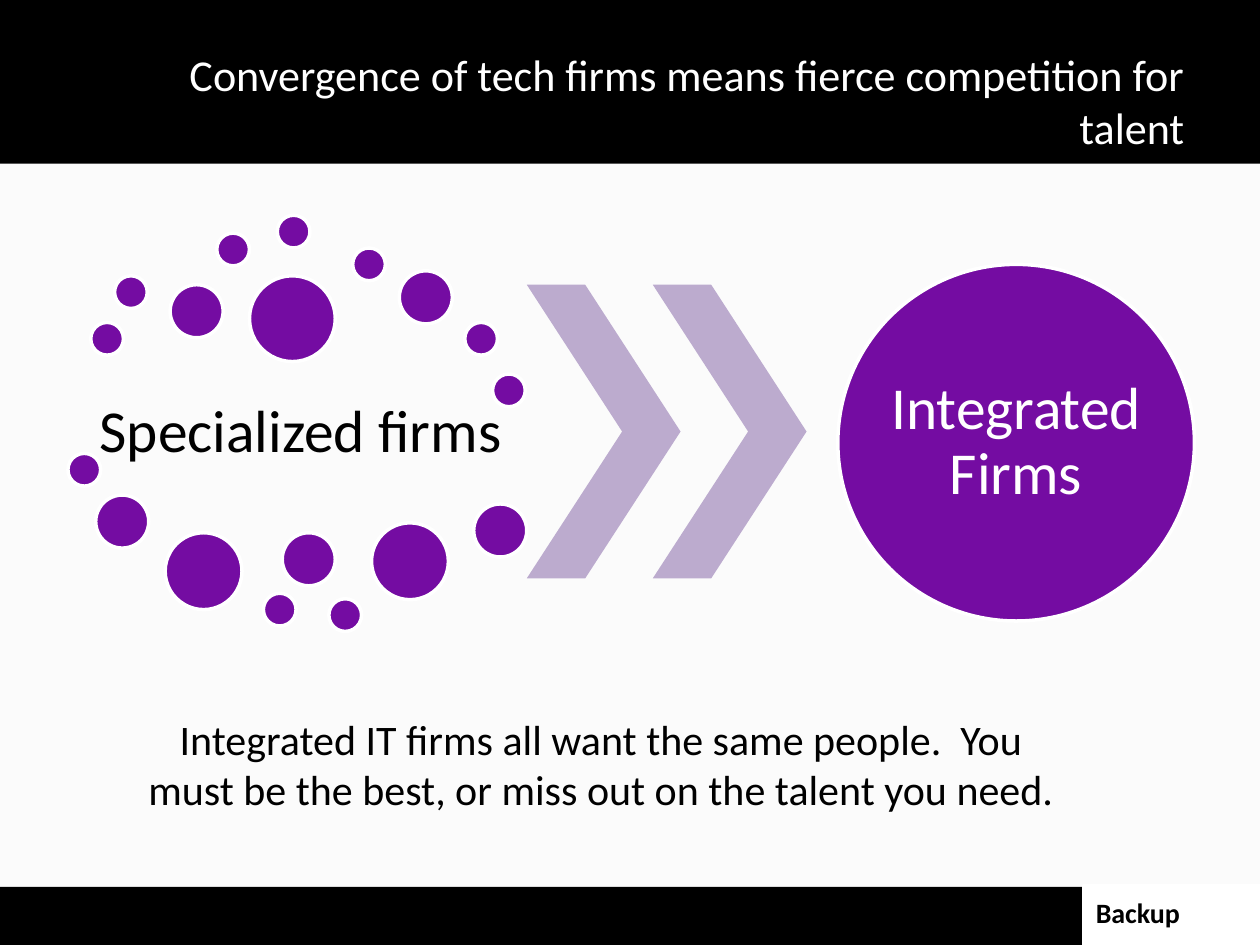
from pptx import Presentation
from pptx.dml.color import RGBColor
from pptx.enum.shapes import MSO_SHAPE
from pptx.enum.text import MSO_ANCHOR, MSO_AUTO_SIZE, PP_ALIGN
from pptx.util import Cm, Pt

RECTANGLE, OVAL, CHEVRON = MSO_SHAPE.RECTANGLE, MSO_SHAPE.OVAL, MSO_SHAPE.CHEVRON
LEFT, CENTER, RIGHT = PP_ALIGN.LEFT, PP_ALIGN.CENTER, PP_ALIGN.RIGHT
TOP, MIDDLE = MSO_ANCHOR.TOP, MSO_ANCHOR.MIDDLE
NO_AUTOFIT = MSO_AUTO_SIZE.NONE

BLACK = RGBColor(0x00, 0x00, 0x00)
WHITE = RGBColor(0xFF, 0xFF, 0xFF)
PAPER = RGBColor(0xFB, 0xFB, 0xFB)
PURPLE = RGBColor(0x74, 0x0C, 0xA2)
LILAC = RGBColor(0xBC, 0xAB, 0xCE)

TITLE_ONLY = 5
WIDTH, HEIGHT = 25.4, 19.05
SMALL, MEDIUM, LARGE, HUGE = 0.66, 1.07, 1.55, 1.73
FIRM_DOTS = [
    (1.83, 6.5, SMALL), (2.31, 5.56, SMALL), (3.43, 5.74, MEDIUM),
    (4.37, 4.7, SMALL), (5.59, 4.34, SMALL), (7.11, 5, SMALL),
    (8.05, 5.46, MEDIUM), (9.37, 6.5, SMALL), (9.93, 7.54, SMALL),
    (5.03, 5.56, HUGE), (1.37, 9.14, SMALL), (1.93, 9.98, MEDIUM),
    (3.33, 10.74, LARGE), (5.31, 11.96, SMALL), (5.69, 10.74, MEDIUM),
    (6.63, 12.07, SMALL), (7.49, 10.54, LARGE), (9.55, 10.16, MEDIUM),
]


class SlideBuilder:
    font_name = "Calibri"
    outline_width = Pt(2)

    def __init__(self, slide):
        self.slide = slide
        background = slide.background.fill
        background.solid()
        background.fore_color.rgb = PAPER

    def label(self, shape, text, size, color, alignment, anchor=MIDDLE,
              bold=False, spacing=1, margins=None, wrap=True):
        frame = shape.text_frame
        frame.text = text
        frame.word_wrap = wrap
        frame.auto_size = NO_AUTOFIT
        frame.vertical_anchor = anchor
        if margins is not None:
            frame.margin_left = frame.margin_right = Cm(margins)
            frame.margin_top = frame.margin_bottom = Cm(margins)
        paragraph = frame.paragraphs[0]
        paragraph.alignment = alignment
        paragraph.line_spacing = spacing
        font = paragraph.font
        font.name, font.size, font.bold = self.font_name, Pt(size), bold
        font.color.rgb = color

    def title(self, text, left, top, width, height):
        title = self.slide.shapes.title
        title.left, title.top = Cm(left), Cm(top)
        title.width, title.height = Cm(width), Cm(height)
        title.element.getparent().append(title.element)
        self.label(title, text, 25.2, WHITE, RIGHT)

    def text(self, text, left, top, width, height, size, alignment, **style):
        box = self.slide.shapes.add_textbox(Cm(left), Cm(top), Cm(width), Cm(height))
        self.label(box, text, size, BLACK, alignment, **style)

    def shape(self, kind, left, top, width, height, fill, outline=None):
        shape = self.slide.shapes.add_shape(kind, Cm(left), Cm(top), Cm(width), Cm(height))
        shape.shadow.inherit = False
        shape.fill.solid()
        shape.fill.fore_color.rgb = fill
        if outline is None:
            shape.line.fill.background()
        else:
            shape.line.color.rgb = outline
            shape.line.width = self.outline_width
        return shape

    def circle(self, left, top, diameter):
        return self.shape(OVAL, left, top, diameter, diameter, PURPLE, WHITE)

    def chevron(self, left, top, width, height):
        chevron = self.shape(CHEVRON, left, top, width, height, LILAC)
        chevron.adjustments[0] = 0.62


def main():
    presentation = Presentation()
    presentation.slide_width, presentation.slide_height = Cm(WIDTH), Cm(HEIGHT)
    slide = presentation.slides.add_slide(presentation.slide_layouts[TITLE_ONLY])
    builder = SlideBuilder(slide)

    builder.shape(RECTANGLE, 0, 0, WIDTH, 3.3, BLACK)
    builder.shape(RECTANGLE, 0, 17.88, WIDTH, 1.17, BLACK)
    builder.shape(RECTANGLE, 21.84, 17.86, 3.89, 1.17, WHITE, WHITE)
    builder.text("Backup", 21.84, 17.93, 2.24, 0.94, 16, LEFT,
                 anchor=TOP, bold=True, wrap=False)
    builder.title("Convergence of tech firms means fierce competition for talent",
                  1.27, 0.76, 22.86, 2.54)

    builder.text("Specialized firms", 1.83, 7.34, 8.46, 2.79, 34, CENTER,
                 spacing=0.9, margins=0.13)
    for left, top, diameter in FIRM_DOTS:
        builder.circle(left, top, diameter)
    for index in range(2):
        builder.chevron(10.62 + 2.54 * index, 5.74, 3.1, 5.92)
    integrated = builder.circle(16.89, 5.33, 7.19)
    builder.label(integrated, "Integrated Firms", 34, WHITE, CENTER,
                  spacing=0.9, margins=0)

    builder.text("Integrated IT firms all want the same people.  You must be the best, "
                 "or miss out on the talent you need.",
                 2.69, 14.25, 18.85, 2.31, 24, CENTER, anchor=TOP)

    presentation.save("out.pptx")


if __name__ == "__main__":
    main()
